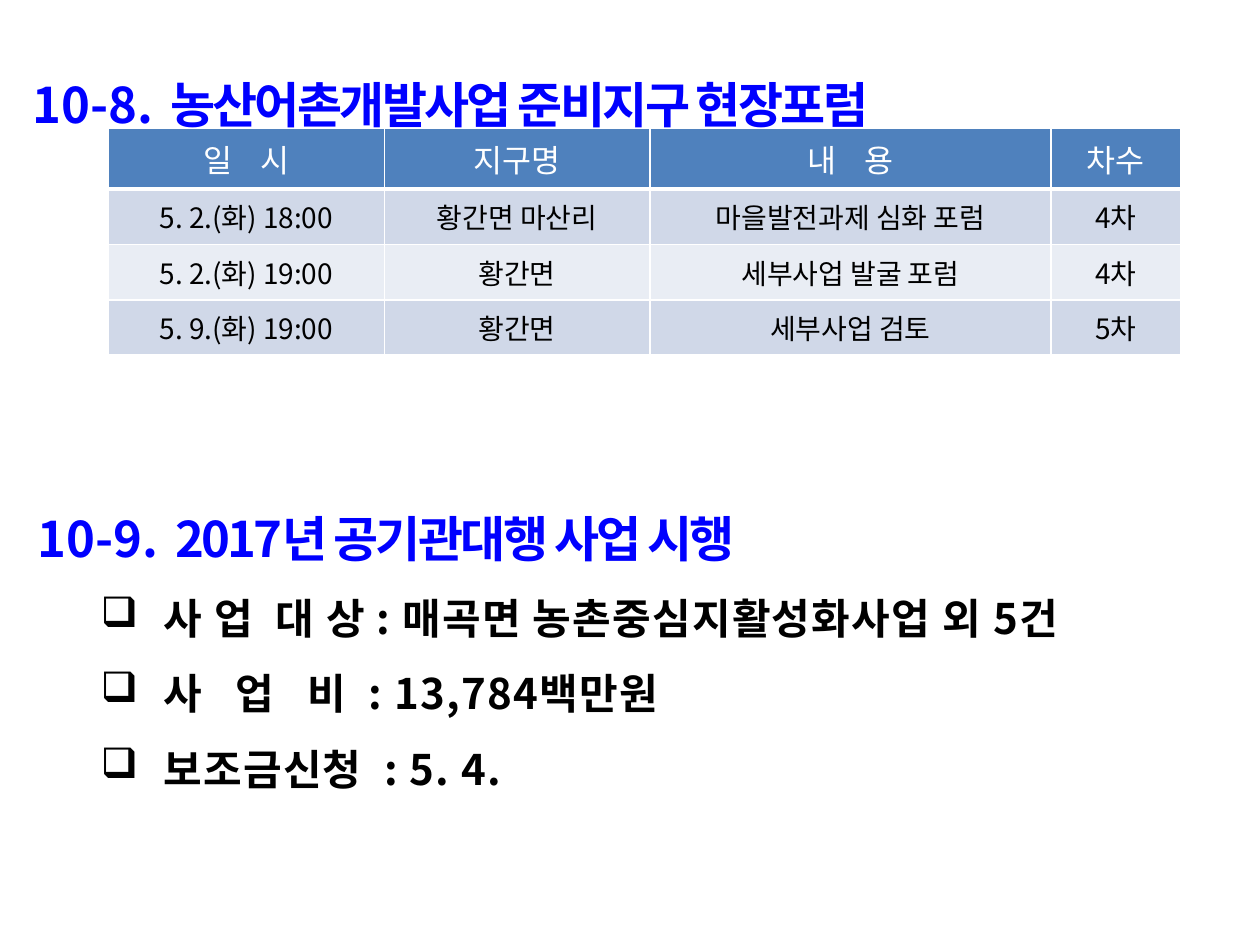
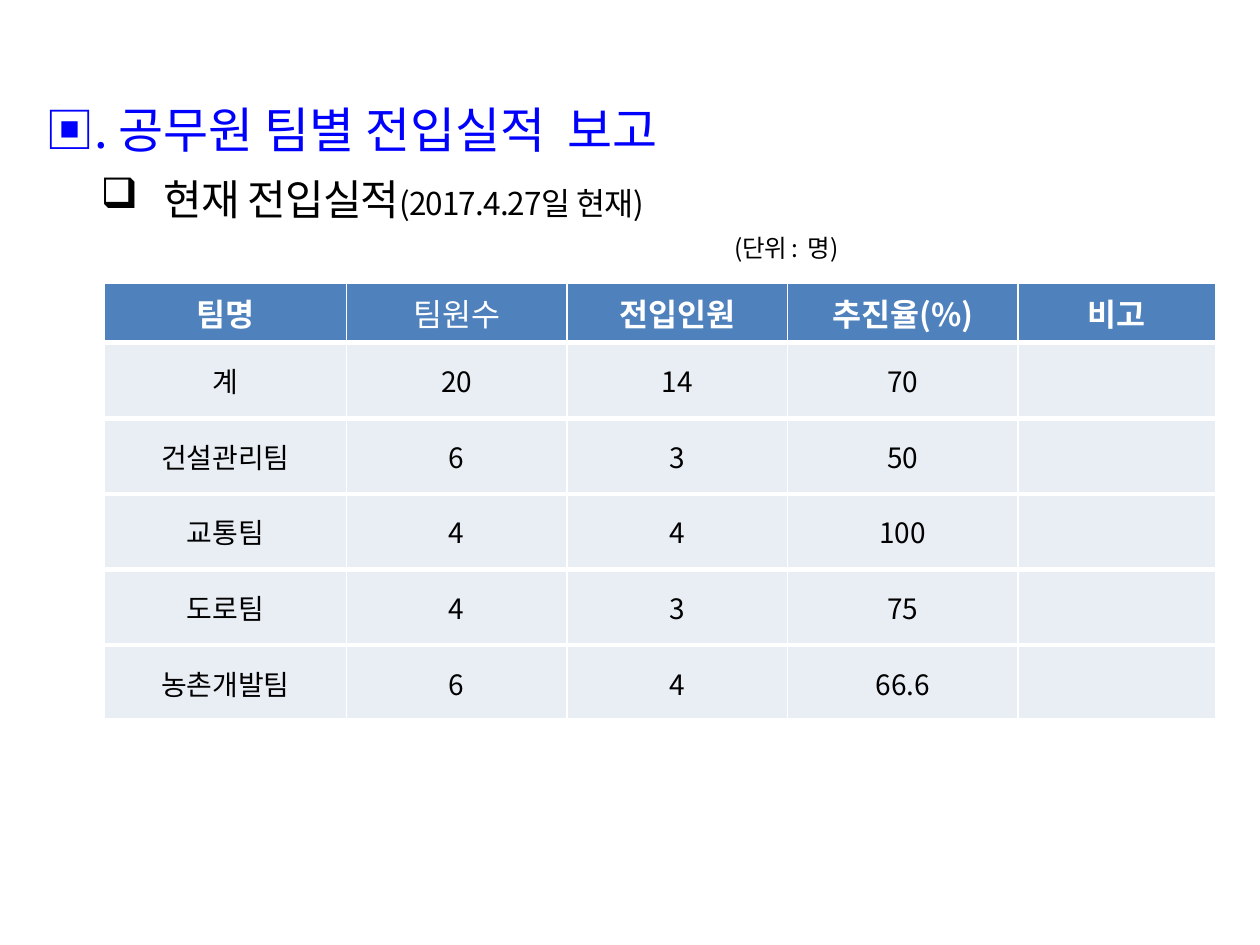
"""Build two report slides with schedules, project notes and team results."""
import lxml.etree
import pptx
import pptx.dml.color
import pptx.enum.text
import pptx.oxml.ns
import pptx.util
from dataclasses import dataclass

Inches = pptx.util.Inches
Pt = pptx.util.Pt
qn = pptx.oxml.ns.qn


@dataclass(frozen=True)
class Theme:
    font: str = "Noto Sans CJK KR"
    title: str = "0000FF"
    ink: str = "000000"
    white: str = "FFFFFF"
    header: str = "4F81BD"
    band_dark: str = "D0D8E8"
    band_light: str = "E9EDF4"
    title_size: int = 28
    body_size: int = 24
    header_size: int = 18
    cell_size: int = 16
    unit_size: int = 14


theme = Theme()


def write_spans(para, spans, size, color, bold=False, spacing=0):
    for text, changes in spans:
        style = {"size": size, "bold": bold, "spacing": spacing, **changes}
        span = para.add_run()
        span.text = text
        font_values = {"name": theme.font, "size": Pt(style["size"]), "bold": style["bold"]}
        for name, value in font_values.items():
            setattr(span.font, name, value)
        span.font.color.rgb = pptx.dml.color.RGBColor.from_string(color)
        properties = span.font._element
        properties.set("spc", str(round(style["spacing"] * 100)))
        latin = properties.find(qn("a:latin"))
        east_asian = lxml.etree.Element(qn("a:ea"), typeface=theme.font)
        latin.addnext(east_asian)


def draw_table(page, place, widths, heights, rows, bands, rule):
    frame = page.shapes.add_table(len(rows), len(widths), *map(Inches, place))
    table = frame.table
    table.horz_banding = False
    for column, width in zip(table.columns, widths):
        column.width = Inches(width)
    for row, height in zip(table.rows, heights):
        row.height = Inches(height)
    for row_number, row in enumerate(rows):
        is_header = row_number == 0
        fill = theme.header if is_header else bands[(row_number - 1) % len(bands)]
        top = 1 if is_header else 3 if row_number == 1 else rule
        edges = {"lnL": 1, "lnR": 1, "lnT": top, "lnB": 3 if is_header else rule}
        for column_number, spans in enumerate(row):
            cell = table.cell(row_number, column_number)
            cell.vertical_anchor = pptx.enum.text.MSO_ANCHOR.MIDDLE
            properties = cell._tc.get_or_add_tcPr()
            for edge, width in edges.items():
                line = lxml.etree.SubElement(properties, qn(f"a:{edge}"), w=str(Pt(width)))
                paint = lxml.etree.SubElement(line, qn("a:solidFill"))
                lxml.etree.SubElement(paint, qn("a:srgbClr"), val=theme.white)
            cell.fill.solid()
            cell.fill.fore_color.rgb = pptx.dml.color.RGBColor.from_string(fill)
            if spans:
                para = cell.text_frame.paragraphs[0]
                para.alignment = pptx.enum.text.PP_ALIGN.CENTER
                spans = [(spans, {})] if isinstance(spans, str) else spans
                size = theme.header_size if is_header else theme.cell_size
                write_spans(para, spans, size, theme.white if is_header else theme.ink)


deck = pptx.Presentation()
deck.slide_width = Inches(10)
deck.slide_height = Inches(7.5)
blank = deck.slide_layouts[6]
forum_page = deck.slides.add_slide(blank)
team_page = deck.slides.add_slide(blank)

forum_rows = [
    [[("일 ", {"spacing": 6}), ("시", {})], "지구명", [("내 ", {"spacing": 6}), ("용", {})], "차수"],
    ["5. 2.(화) 18:00", "황간면 마산리", "마을발전과제 심화 포럼", "4차"],
    ["5. 2.(화) 19:00", "황간면", "세부사업 발굴 포럼", "4차"],
    ["5. 9.(화) 19:00", "황간면", "세부사업 검토", "5차"],
]
draw_table(forum_page, (0.86, 1.02, 8.51, 1.8), (2.19, 2.11, 3.18, 1.03),
           [0.48] + [0.44] * 3, forum_rows, (theme.band_dark, theme.band_light), 1)

section = {"size": theme.title_size, "color": theme.title, "bold": True}
item = {"size": theme.body_size, "color": theme.ink, "bold": True, "spacing": 0.7}
team_title = {"size": theme.title_size, "color": theme.title}
team_item = {"size": theme.body_size, "color": theme.ink, "spacing": -0.5}
unit_note = {"size": theme.unit_size, "color": theme.ink, "spacing": -0.5}
tight = {"spacing": -1.5}
gap = {"spacing": 3.3}
wide = {"spacing": 6.8}

section_layout = {"margin": 0.58, "indent": -0.58}
item_layout = {"margin": 1, "indent": -0.5, "bullet": "❑"}
team_layout = {"margin": 0.56, "indent": -0.5, "before": 5.6}
unit_layout = {"margin": 5.53, "indent": 0}

text_boxes = [
    (forum_page, (0.16, 0.31, 9.14, 0.81), 1.5, [
        (section_layout, section, [("10-8", {}), (".", tight), (" ", gap),
                                   ("농산어촌개발사업 준비지구 현장포럼", tight)]),
    ]),
    (forum_page, (0.2, 3.75, 9.37, 2.63), 1.5, [
        (section_layout, section, [("10-9", {}), (".", tight), (" ", gap),
                                   ("2017년 공기관대행 사업 시행", tight)]),
        (item_layout, item, [("사 업", {}), (" ", wide),
                             ("대 상 : 매곡면 농촌중심지활성화사업 외 5건", {})]),
        (item_layout, item, [("사 업 ", wide), ("비", {}), (" ", wide), (": 13,784백만원", {})]),
        (item_layout, item, [("보조금신청", {}), (" ", wide), (": 5. 4.", {})]),
    ]),
    (team_page, (0.2, 0.6, 9.8, 6.38), 1.3, [
        (team_layout, team_title, [("▣. 공무원 팀별 전입실적", {}), (" ", {"spacing": 6.3}), ("보고", {})]),
        (item_layout, team_item, [("현재 전입실적", {}),
                                  ("(2017.4.27일 현재)", {"size": theme.header_size})]),
        (unit_layout, unit_note, [("(단위 :", {}), (" ", {"spacing": 2.1}), ("명)", {})]),
    ]),
]
for page, place, line_spacing, lines in text_boxes:
    box = page.shapes.add_textbox(*map(Inches, place))
    box.text_frame.word_wrap = True
    for number, (layout, style, spans) in enumerate(lines):
        para = box.text_frame.add_paragraph() if number else box.text_frame.paragraphs[0]
        para.line_spacing = line_spacing
        para.space_before = Pt(layout.get("before", 0))
        properties = para._p.get_or_add_pPr()
        properties.set("marL", str(Inches(layout["margin"])))
        properties.set("indent", str(Inches(layout["indent"])))
        if "bullet" in layout:
            para.level = 1
            paint = lxml.etree.SubElement(properties, qn("a:buClr"))
            lxml.etree.SubElement(paint, qn("a:srgbClr"), val=theme.ink)
            lxml.etree.SubElement(properties, qn("a:buChar"), char=layout["bullet"])
        write_spans(para, spans, **style)

strong = {"bold": True}
team_rows = [
    [[("팀명", strong)], "팀원수", [("전입인원", strong)], [("추진율(%)", strong)], [("비고", strong)]],
    ["계", "20", "14", "70", ""],
    ["건설관리팀", "6", "3", "50", ""],
    ["교통팀", "4", "4", "100", ""],
    ["도로팀", "4", "3", "75", ""],
    ["농촌개발팀", "6", "4", "66.6", ""],
]
draw_table(team_page, (0.83, 2.25, 8.82, 3.47), (1.92, 1.75, 1.75, 1.83, 1.57),
           [0.47] + [0.6] * 5, team_rows, (theme.band_light,), 3)

deck.save("out.pptx")
